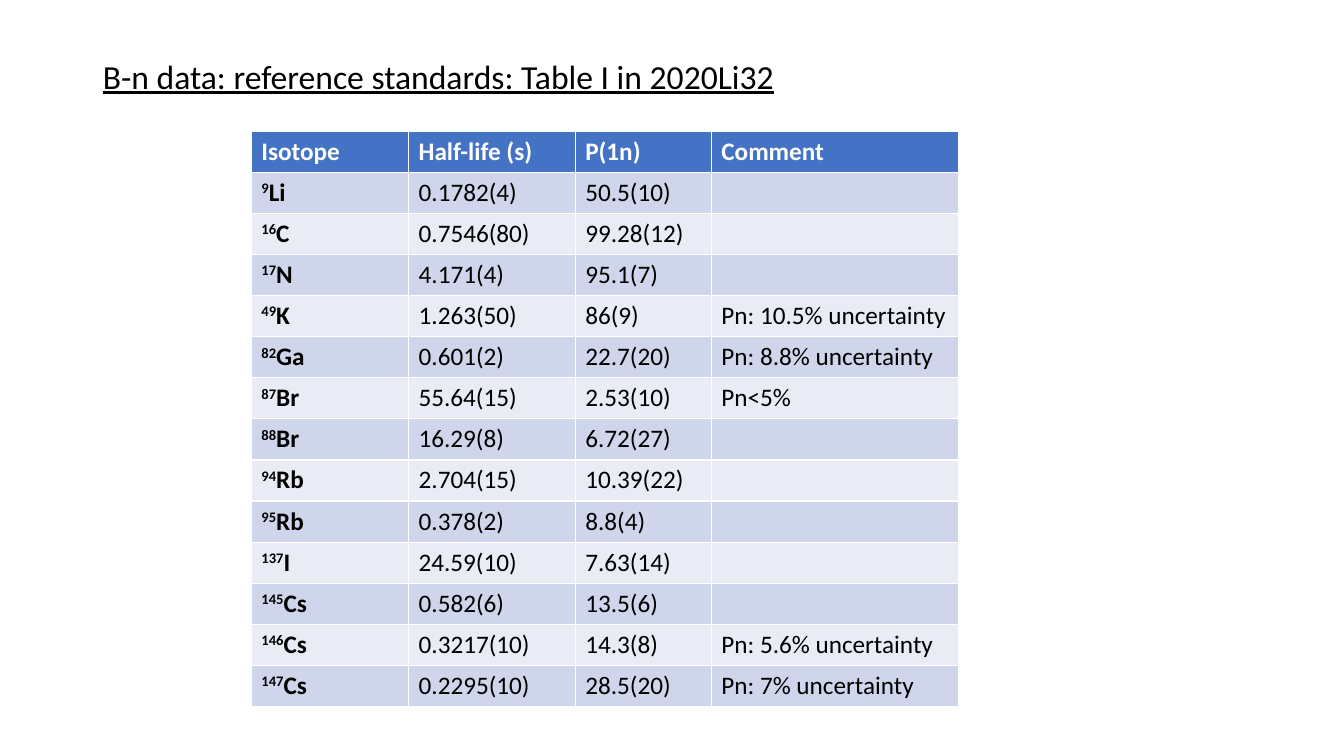
from pptx import Presentation
from pptx.dml.color import RGBColor
from pptx.enum.text import MSO_ANCHOR, MSO_AUTO_SIZE, PP_ALIGN
from pptx.util import Inches, Pt

LEFT = PP_ALIGN.LEFT
MIDDLE = MSO_ANCHOR.MIDDLE
NO_FIT = MSO_AUTO_SIZE.NONE
TITLE_ONLY = 5

HEADER = ["Isotope", "Half-life (s)", "P(1n)", "Comment"]
# Mass number, element, half-life, neutron emission probability, comment
ISOTOPES = [
    ("9", "Li", "0.1782(4)", "50.5(10)", ""),
    ("16", "C", "0.7546(80)", "99.28(12)", ""),
    ("17", "N", "4.171(4)", "95.1(7)", ""),
    ("49", "K", "1.263(50)", "86(9)", "Pn: 10.5% uncertainty"),
    ("82", "Ga", "0.601(2)", "22.7(20)", "Pn: 8.8% uncertainty"),
    ("87", "Br", "55.64(15)", "2.53(10)", "Pn<5%"),
    ("88", "Br", "16.29(8)", "6.72(27)", ""),
    ("94", "Rb", "2.704(15)", "10.39(22)", ""),
    ("95", "Rb", "0.378(2)", "8.8(4)", ""),
    ("137", "I", "24.59(10)", "7.63(14)", ""),
    ("145", "Cs", "0.582(6)", "13.5(6)", ""),
    ("146", "Cs", "0.3217(10)", "14.3(8)", "Pn: 5.6% uncertainty"),
    ("147", "Cs", "0.2295(10)", "28.5(20)", "Pn: 7% uncertainty"),
]


def color(value):
    return RGBColor.from_string(value)


class Deck:
    """Slide style and builders; lengths are percentages of the slide."""

    font = "Calibri"
    ink, paper = "000000", "FFFFFF"
    header_fill = "4472C4"
    bands = ("CFD5EA", "E9EBF5")

    def __init__(self, width, height):
        self.prs = Presentation()
        self.prs.slide_width = Inches(width)
        self.prs.slide_height = Inches(height)
        self.s = self.prs.slides.add_slide(self.prs.slide_layouts[TITLE_ONLY])

    def x(self, share):
        return round(self.prs.slide_width * share / 100)

    def y(self, share):
        return round(self.prs.slide_height * share / 100)

    def run(self, p, text, size, ink, bold=False):
        r = p.add_run()
        r.text = text
        r.font.name, r.font.size, r.font.bold = self.font, Pt(size), bold
        r.font.color.rgb = color(ink)
        return r

    def title(self, text, left, top, width, height):
        sp = self.s.shapes.title
        sp.left, sp.top = self.x(left), self.y(top)
        sp.width, sp.height = self.x(width), self.y(height)
        tf = sp.text_frame
        tf.vertical_anchor, tf.auto_size = MIDDLE, NO_FIT
        p = tf.paragraphs[0]
        p.alignment, p.line_spacing = LEFT, 0.9
        self.run(p, text, 24, self.ink).font.underline = True

    def cell(self, cell, text, fill, ink, bold=False, mass=""):
        cell.fill.solid()
        cell.fill.fore_color.rgb = color(fill)
        p = cell.text_frame.paragraphs[0]
        if mass:
            r = self.run(p, mass, 18, ink, bold)
            r.font._element.set("baseline", "30000")
        if text:
            self.run(p, text, 18, ink, bold)

    def table(self, left, top, col_widths, row_height):
        rows = len(ISOTOPES) + 1
        table = self.s.shapes.add_table(
            rows, len(HEADER), self.x(left), self.y(top),
            self.x(sum(col_widths)), self.y(row_height * rows)).table
        for column, width in zip(table.columns, col_widths):
            column.width = self.x(width)
        # Header row
        for c, text in enumerate(HEADER):
            self.cell(table.cell(0, c), text, self.header_fill, self.paper, True)
        # Banded isotope rows
        for i, (mass, element, *values) in enumerate(ISOTOPES):
            fill = self.bands[i % 2]
            self.cell(table.cell(i + 1, 0), element, fill, self.ink, True, mass)
            for c, text in enumerate(values, 1):
                self.cell(table.cell(i + 1, c), text, fill, self.ink)


def main():
    deck = Deck(13.33, 7.5)
    deck.title("B-n data: reference standards: Table I in 2020Li32",
               6.9, 5.33, 86.27, 10.13)
    deck.table(18.7, 17.33, [11.7, 12.4, 10.13, 18.38], 5.44)
    deck.prs.save("out.pptx")


if __name__ == "__main__":
    main()
